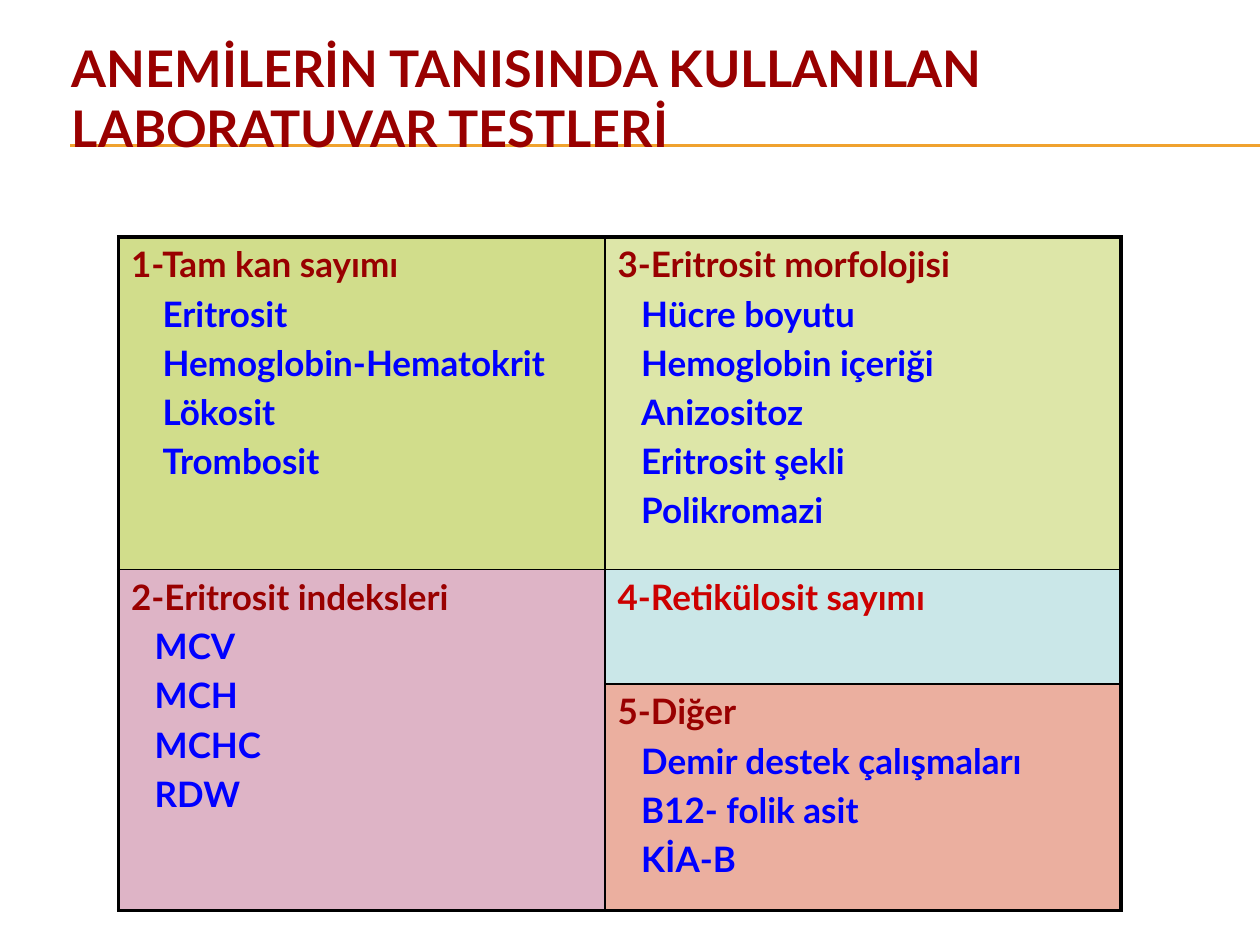
from dataclasses import dataclass

from lxml.etree import SubElement
from pptx import Presentation
from pptx.dml.color import RGBColor
from pptx.enum.shapes import MSO_CONNECTOR
from pptx.enum.text import MSO_ANCHOR
from pptx.oxml import parse_xml
from pptx.oxml.ns import nsdecls, qn
from pptx.slide import Slide
from pptx.table import Table
from pptx.util import Pt


@dataclass(frozen=True)
class Theme:
    font: str = "Lato"
    title_size: float = 28.8
    body_size: float = 20
    item_gap: float = 4
    heading: str = "990000"
    alert: str = "CC0000"
    item: str = "0000FF"
    rule: str = "F0A22E"
    border: str = "000000"
    outer_border: float = 2.25
    inner_border: float = 1


THEME = Theme()


@dataclass(frozen=True)
class TestGroup:
    row: int
    column: int
    heading: str
    items: tuple[str, ...]
    fill: str
    indent: float = 13.5
    row_span: int = 1
    heading_color: str = THEME.heading


COLUMN_WIDTHS = (278, 295)
ROW_HEIGHTS = (190, 65.5, 129.5)
GROUPS = (
    TestGroup(0, 0, "1-Tam kan sayımı",
              ("Eritrosit", "Hemoglobin-Hematokrit", "Lökosit", "Trombosit"),
              "D1DD8B", indent=18),
    TestGroup(0, 1, "3-Eritrosit morfolojisi",
              ("Hücre boyutu", "Hemoglobin içeriği", "Anizositoz",
               "Eritrosit şekli", "Polikromazi"), "DDE6A8"),
    TestGroup(1, 0, "2-Eritrosit indeksleri",
              ("MCV", "MCH", "MCHC", "RDW"), "DEB4C6", row_span=2),
    TestGroup(1, 1, "4-Retikülosit sayımı", (), "CAE7E8",
              heading_color=THEME.alert),
    TestGroup(2, 1, "5-Diğer",
              ("Demir destek çalışmaları", "B12- folik asit", "KİA-B"), "EBAF9F"),
)


def write(paragraph, text: str, *, size: float, color: str,
          indent: float = 0, before: float = 0) -> None:
    run = paragraph.add_run()
    run.text = text
    run.font.name = THEME.font
    run.font.size = Pt(size)
    run.font.bold = True
    run.font.color.rgb = RGBColor.from_string(color)
    paragraph.space_before = Pt(before)
    properties = paragraph._p.get_or_add_pPr()
    properties.set("marL", str(Pt(indent)))
    properties.set("indent", "0")


def add_rule(slide: Slide, left: float, right: float, top: float) -> None:
    line = slide.shapes.add_connector(
        MSO_CONNECTOR.STRAIGHT, Pt(left), Pt(top), Pt(right), Pt(top))
    line.line.color.rgb = RGBColor.from_string(THEME.rule)
    line.line.width = Pt(0.75)
    SubElement(line._element.spPr, qn("a:effectLst"))


def add_title(slide: Slide, text: str) -> None:
    box = slide.shapes.add_textbox(Pt(34), Pt(16.5), Pt(641), Pt(78.5))
    frame = box.text_frame
    frame.word_wrap = True
    frame.vertical_anchor = MSO_ANCHOR.MIDDLE
    write(frame.paragraphs[0], text, size=THEME.title_size, color=THEME.heading)


def set_borders(table: Table, row: int, column: int) -> None:
    """Draw thick lines on the table's outer edge and thin ones inside."""
    on_edge = {
        "lnL": column == 0,
        "lnR": column == len(COLUMN_WIDTHS) - 1,
        "lnT": row == 0,
        "lnB": row == len(ROW_HEIGHTS) - 1,
    }
    properties = table.cell(row, column)._tc.get_or_add_tcPr()
    for position, (side, outer) in enumerate(on_edge.items()):
        width = Pt(THEME.outer_border if outer else THEME.inner_border)
        properties.insert(position, parse_xml(
            f'<a:{side} {nsdecls("a")} w="{width}"><a:solidFill>'
            f'<a:srgbClr val="{THEME.border}"/></a:solidFill></a:{side}>'))


def fill_group(table: Table, group: TestGroup) -> None:
    cell = table.cell(group.row, group.column)
    last_row = group.row + group.row_span - 1
    if group.row_span > 1:
        cell.merge(table.cell(last_row, group.column))
    cell.fill.solid()
    cell.fill.fore_color.rgb = RGBColor.from_string(group.fill)
    frame = cell.text_frame
    write(frame.paragraphs[0], group.heading,
          size=THEME.body_size, color=group.heading_color)
    for item in group.items:
        write(frame.add_paragraph(), item, size=THEME.body_size,
              color=THEME.item, indent=group.indent, before=THEME.item_gap)
    set_borders(table, group.row, group.column)
    if group.row_span > 1:
        set_borders(table, last_row, group.column)
        # The merged cell's own lower edge is the edge of its last row.
        lower_edge = cell._tc.tcPr.find(qn("a:lnB"))
        lower_edge.set("w", str(Pt(THEME.outer_border)))


def add_test_table(slide: Slide) -> None:
    table = slide.shapes.add_table(
        len(ROW_HEIGHTS), len(COLUMN_WIDTHS), Pt(67.7), Pt(135.4),
        Pt(sum(COLUMN_WIDTHS)), Pt(sum(ROW_HEIGHTS))).table
    table.first_row = False
    table.horz_banding = False
    for column, width in zip(table.columns, COLUMN_WIDTHS):
        column.width = Pt(width)
    for row, height in zip(table.rows, ROW_HEIGHTS):
        row.height = Pt(height)
    for group in GROUPS:
        fill_group(table, group)


def main() -> None:
    presentation = Presentation()
    presentation.slide_width = Pt(720)
    presentation.slide_height = Pt(540)
    slide = presentation.slides.add_slide(presentation.slide_layouts[6])
    for top in (82.8, 83.5):
        add_rule(slide, 40.3, 720, top)
    add_title(slide, "ANEMİLERİN TANISINDA KULLANILAN LABORATUVAR TESTLERİ")
    add_test_table(slide)
    presentation.save("out.pptx")


if __name__ == "__main__":
    main()
